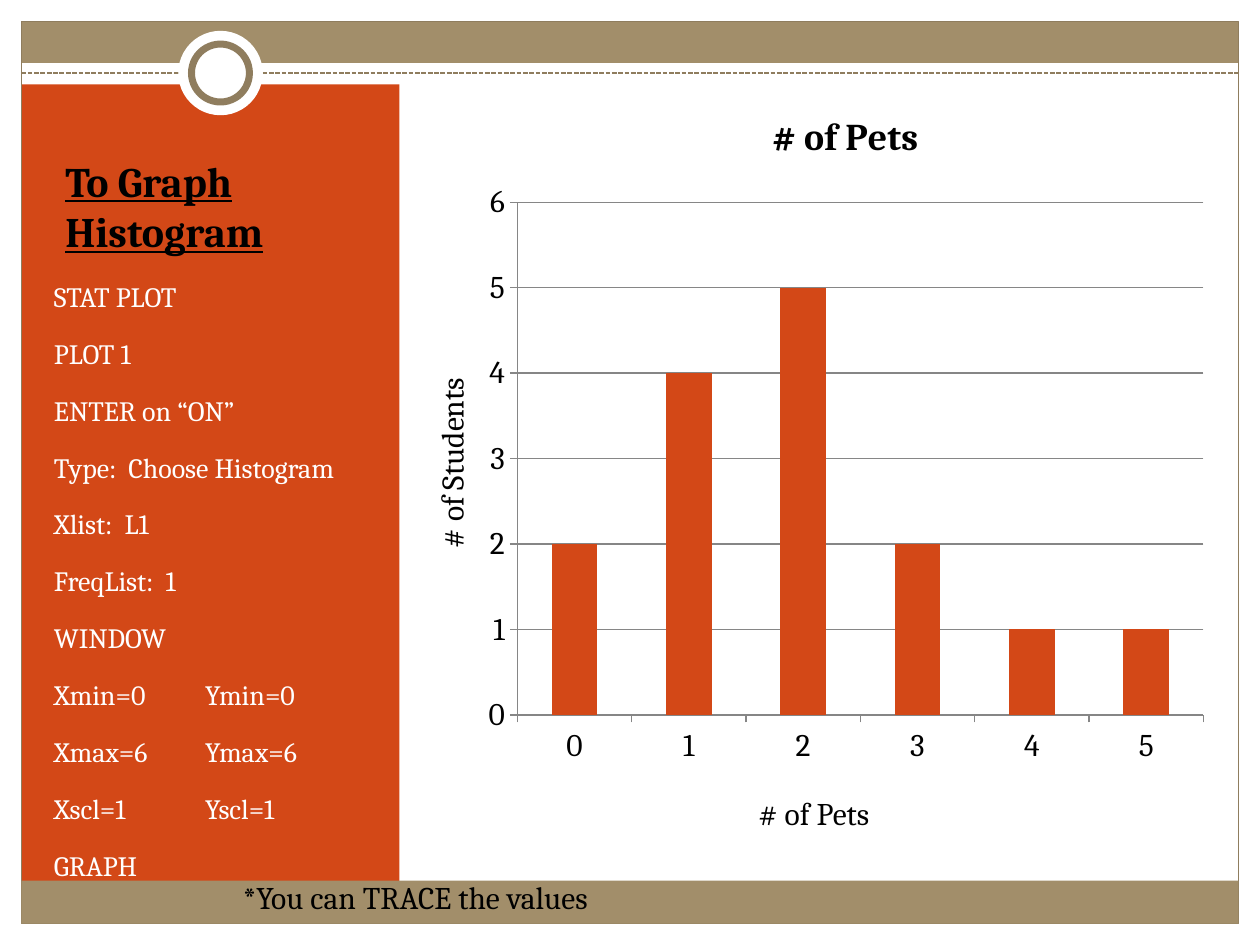
import pptx
import pptx.chart.data
import pptx.dml.color
import pptx.enum.chart
import pptx.enum.dml
import pptx.enum.shapes
import pptx.enum.text
import pptx.oxml
import pptx.oxml.ns
import pptx.util
from lxml import etree
from pptx.util import Inches

FONT = "Cambria"
TAN, BROWN, ORANGE = "A28E6A", "8F7D5E", "D34817"
BLACK, WHITE, GRAY = "000000", "FFFFFF", "868686"
RECTANGLE = pptx.enum.shapes.MSO_SHAPE.RECTANGLE
OVAL = pptx.enum.shapes.MSO_SHAPE.OVAL

STEPS = [
    "STAT PLOT",
    "PLOT 1",
    "ENTER on “ON”",
    "Type:  Choose Histogram",
    "Xlist:  L1",
    "FreqList:  1",
    "WINDOW",
    "Xmin=0\tYmin=0",
    "Xmax=6\tYmax=6",
    "Xscl=1\tYscl=1",
    "GRAPH",
]


def color(value):
    return pptx.dml.color.RGBColor.from_string(value)


def set_font(font, size, value=BLACK, bold=False, underline=False):
    font.name = FONT
    font.size = pptx.util.Pt(size)
    font.color.rgb = color(value)
    font.bold = bold
    font.underline = underline


def add_panel(slide, kind, box, fill=None, line=None, width=0.75):
    shape = slide.shapes.add_shape(kind, *map(Inches, box))
    shape.shadow.inherit = False
    if fill:
        shape.fill.solid()
        shape.fill.fore_color.rgb = color(fill)
    else:
        shape.fill.background()
    if line:
        shape.line.color.rgb = color(line)
        shape.line.width = pptx.util.Pt(width)
    else:
        shape.line.fill.background()
    return shape


def add_text(slide, box, lines, size=18, wrap=False, anchor="TOP", before=0,
             after=0, tab=None, rotation=0, **font_format):
    shape = slide.shapes.add_textbox(*map(Inches, box))
    shape.rotation = rotation
    frame = shape.text_frame
    frame.word_wrap = wrap
    frame.vertical_anchor = getattr(pptx.enum.text.MSO_ANCHOR, anchor)
    for index, line in enumerate(lines):
        paragraph = frame.add_paragraph() if index else frame.paragraphs[0]
        paragraph.space_before = pptx.util.Pt(before)
        paragraph.space_after = pptx.util.Pt(after)
        run = paragraph.add_run()
        run.text = line
        set_font(run.font, size, **font_format)
        if tab and "\t" in line:
            properties = paragraph._p.get_or_add_pPr()
            tabs = etree.SubElement(properties, pptx.oxml.ns.qn("a:tabLst"))
            etree.SubElement(tabs, pptx.oxml.ns.qn("a:tab"),
                             pos=str(Inches(tab)), algn="l")
    return shape


def add_frame(slide, left, top, width, height):
    # Top band, orange sidebar and outline
    add_panel(slide, RECTANGLE, (left, top, width, 0.33), TAN)
    add_panel(slide, RECTANGLE, (left, top + 0.5, 3, height - 0.74), ORANGE)
    add_panel(slide, RECTANGLE, (left, top, width, height), line=BROWN)

    # Dashed rule
    rule_y = top + 0.41
    rule = slide.shapes.add_connector(
        pptx.enum.shapes.MSO_CONNECTOR.STRAIGHT,
        Inches(left), Inches(rule_y), Inches(left + width), Inches(rule_y))
    rule.line.color.rgb = color(BROWN)
    rule.line.width = pptx.util.Pt(0.9)
    rule.line.dash_style = pptx.enum.dml.MSO_LINE.SQUARE_DOT
    etree.SubElement(rule._element.spPr, pptx.oxml.ns.qn("a:effectLst"))

    # Ring centred on the rule
    for diameter, line in ((0.67, None), (0.46, BROWN)):
        box = (1.75 - diameter / 2, rule_y - diameter / 2, diameter, diameter)
        add_panel(slide, OVAL, box, WHITE, line, 4)

    # Bottom band
    add_panel(slide, RECTANGLE, (left, top + height - 0.34, width, 0.34), TAN)


def add_instructions(slide, left, top, width, height):
    add_text(slide, (left + 0.09, top, width - 0.17, 1.08),
             ["To Graph Histogram"], size=24, wrap=True, anchor="BOTTOM",
             bold=True, underline=True)
    add_text(slide, (left, top + 1.17, width, height - 1.17), STEPS, size=16,
             wrap=True, before=3.3, after=10, tab=1.2, value=WHITE)


def set_plot_layout(chart, x, y, w, h):
    plot_area = chart._chartSpace.chart.plotArea
    for layout in plot_area.findall(pptx.oxml.ns.qn("c:layout")):
        plot_area.remove(layout)
    layout = etree.Element(pptx.oxml.ns.qn("c:layout"))
    manual = etree.SubElement(layout, pptx.oxml.ns.qn("c:manualLayout"))
    settings = {"layoutTarget": "inner", "xMode": "edge", "yMode": "edge",
                "x": x, "y": y, "w": w, "h": h}
    for name, value in settings.items():
        etree.SubElement(manual, pptx.oxml.ns.qn("c:" + name), val=str(value))
    plot_area.insert(0, layout)


def add_histogram(slide, left, top, width, height):
    data = pptx.chart.data.CategoryChartData()
    data.categories = ["0", "1", "2", "3", "4", "5"]
    data.add_series("# of Pets", [2, 4, 5, 2, 1, 1])
    chart = slide.shapes.add_chart(
        pptx.enum.chart.XL_CHART_TYPE.COLUMN_CLUSTERED,
        *map(Inches, (left, top, width, height)), data).chart
    set_font(chart.font, 18)
    chart.has_legend = False
    chart.has_title = True
    title = chart.chart_title.text_frame
    title.text = "# of Pets"
    set_font(title.paragraphs[0].runs[0].font, 21.6, bold=True)
    set_plot_layout(chart, 0.06, 0.17, 0.92, 0.74)

    # Bars
    plot = chart.plots[0]
    plot.gap_width = 150
    plot.vary_by_categories = False
    fill = plot.series[0].format.fill
    fill.solid()
    fill.fore_color.rgb = color(ORANGE)

    # Axes and gridlines
    value_axis = chart.value_axis
    value_axis.minimum_scale, value_axis.maximum_scale = 0, 6
    value_axis.major_unit = 1
    value_axis.has_major_gridlines = True
    for axis in (chart.category_axis, value_axis):
        axis.major_tick_mark = pptx.enum.chart.XL_TICK_MARK.OUTSIDE
    for part in (chart.category_axis, value_axis, value_axis.major_gridlines):
        part.format.line.color.rgb = color(GRAY)
        part.format.line.width = pptx.util.Pt(0.75)

    # Axis captions
    add_text(slide, (left - 1.02, top + 2.73, 1.7, 0.4), ["# of Students"],
             rotation=270)
    add_text(slide, (left + 2.17, top + height + 0.08, 1.18, 0.4),
             ["# of Pets"])


def main():
    presentation = pptx.Presentation()
    presentation.slide_width = Inches(10)
    presentation.slide_height = Inches(7.5)
    slide = presentation.slides.add_slide(presentation.slide_layouts[6])
    add_frame(slide, 0.17, 0.17, 9.66, 7.16)
    add_instructions(slide, 0.33, 1, 2.75, 6)
    add_histogram(slide, 3.75, 0.67, 5.92, 5.5)
    # Footer note
    add_text(slide, (1.83, 6.92, 3.29, 0.4), ["*You can TRACE the values"])
    presentation.save("out.pptx")


if __name__ == "__main__":
    main()
